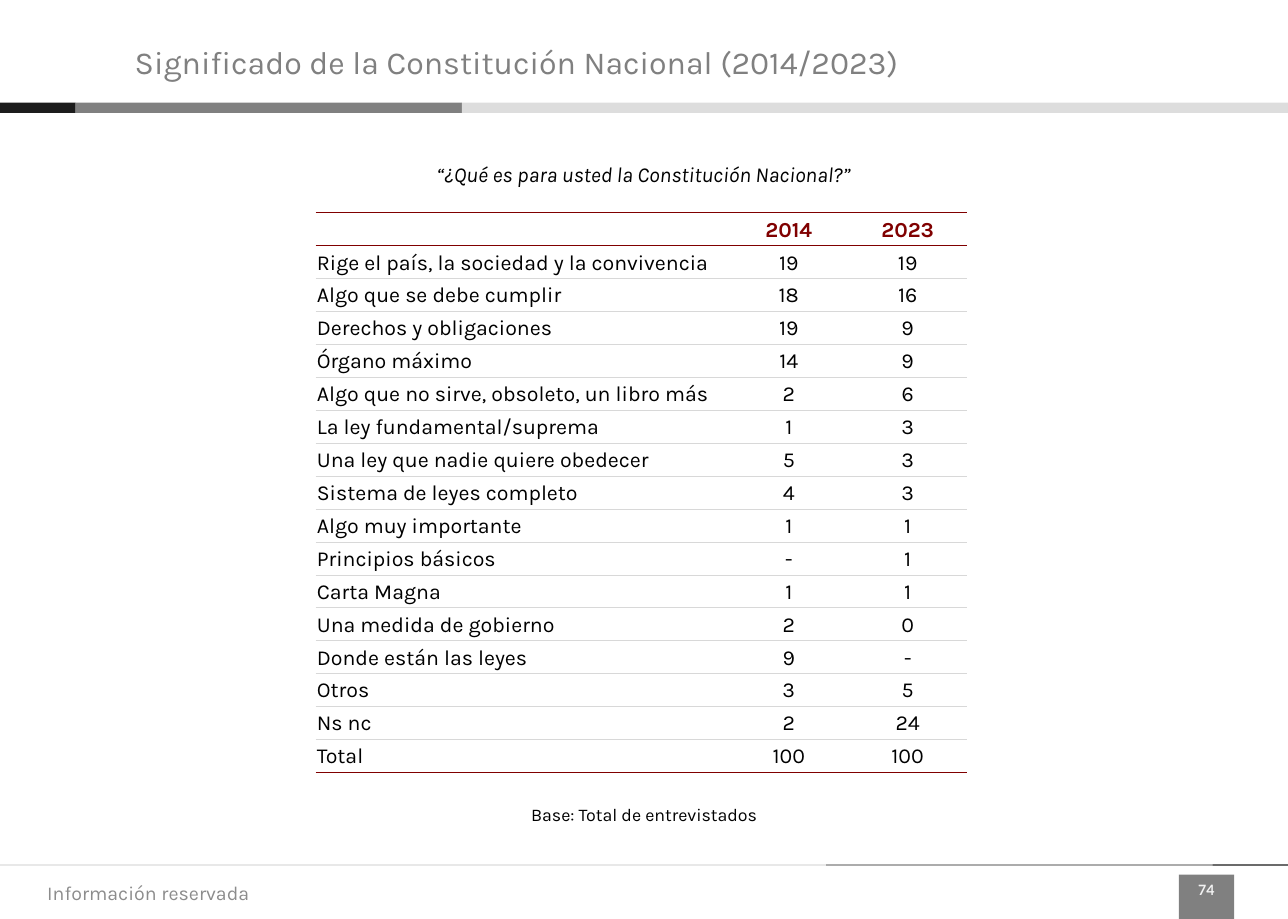
import pptx
import pptx.util
import pptx.dml.color
import pptx.enum.shapes
import pptx.enum.text
import pptx.oxml
import pptx.oxml.ns

Inches, Pt = pptx.util.Inches, pptx.util.Pt
RGBColor = pptx.dml.color.RGBColor
ALIGN, ANCHOR = pptx.enum.text.PP_ALIGN, pptx.enum.text.MSO_ANCHOR
RECT = pptx.enum.shapes.MSO_SHAPE.RECTANGLE

SLIDE_W, SLIDE_H = Inches(10.04), Pt(516)
W, H = SLIDE_W.inches, SLIDE_H.inches
BLACK = RGBColor(0x00, 0x00, 0x00)
DARK = RGBColor(0x1C, 0x1C, 0x1C)
GREY = RGBColor(0x80, 0x80, 0x80)
LIGHT = RGBColor(0xDD, 0xDD, 0xDD)
FOOTER = RGBColor(0x8C, 0x8C, 0x8C)
PAGE = RGBColor(0xF2, 0xF2, 0xF2)
MAROON = RGBColor(0x80, 0x00, 0x00)
RULE = RGBColor(0xD8, 0xD8, 0xD8)

# Band segments: width in inches, and colour
BAND = [(0.59, DARK), (3.01, GREY), (6.44, LIGHT)]

YEARS = ("", "2014", "2023")
ANSWERS = [
    ("Rige el país, la sociedad y la convivencia", "19", "19"),
    ("Algo que se debe cumplir", "18", "16"),
    ("Derechos y obligaciones", "19", "9"),
    ("Órgano máximo", "14", "9"),
    ("Algo que no sirve, obsoleto, un libro más", "2", "6"),
    ("La ley fundamental/suprema", "1", "3"),
    ("Una ley que nadie quiere obedecer", "5", "3"),
    ("Sistema de leyes completo", "4", "3"),
    ("Algo muy importante", "1", "1"),
    ("Principios básicos", "-", "1"),
    ("Carta Magna", "1", "1"),
    ("Una medida de gobierno", "2", "0"),
    ("Donde están las leyes", "9", "-"),
    ("Otros", "3", "5"),
    ("Ns nc", "2", "24"),
    ("Total", "100", "100"),
]


def add_run(p, text, size, color, font="Karla", bold=False, italic=False):
    r = p.add_run()
    r.text = text
    r.font.name, r.font.size = font, Pt(size)
    r.font.bold, r.font.italic = bold, italic
    r.font.color.rgb = color


def add_rect(slide, box, color):
    sp = slide.shapes.add_shape(RECT, *map(Inches, box))
    sp.shadow.inherit = False
    sp.fill.solid()
    sp.fill.fore_color.rgb = color
    sp.line.fill.background()
    return sp


def add_text(slide, box, text, size, color, align=ALIGN.LEFT,
             anchor=ANCHOR.TOP, italic=False, wrap=True):
    tf = slide.shapes.add_textbox(*map(Inches, box)).text_frame
    tf.word_wrap = wrap
    tf.vertical_anchor = anchor
    p = tf.paragraphs[0]
    p.alignment = align
    add_run(p, text, size, color, italic=italic)


def add_band(slide, box, segments):
    x, y, _, h = box
    for width, color in segments:
        add_rect(slide, (x, y, width, h), color)
        x += width


def add_header(slide, box, text):
    x, y, w, h = box
    add_band(slide, (x, y + h - 0.08, w, 0.08), BAND)
    title = slide.shapes.title
    title.left, title.top = Inches(x + 0.95), Inches(y + 0.11)
    title.width, title.height = Inches(7.88), Inches(0.74)
    tf = title.text_frame
    tf.auto_size = pptx.enum.text.MSO_AUTO_SIZE.NONE
    tf.vertical_anchor = ANCHOR.MIDDLE
    p = tf.paragraphs[0]
    p.alignment = ALIGN.LEFT
    add_run(p, text, 18, GREY)


def add_footer(slide, box, text, number):
    x, y, w, h = box
    add_band(slide, (x, y, w, 0.01), BAND[::-1])
    add_text(slide, (x + 0.27, y + 0.03, 2.34, 0.38), text, 11, FOOTER,
             anchor=ANCHOR.MIDDLE)
    sp = add_rect(slide, (x + w - 0.85, y + 0.08, 0.43, h - 0.08), GREY)
    tf = sp.text_frame
    tf.vertical_anchor = ANCHOR.TOP
    p = tf.paragraphs[0]
    p.alignment = ALIGN.CENTER
    add_run(p, number, 8, PAGE, font="Lato", bold=True)


def set_borders(cell, top, bottom):
    """Draw the top and bottom borders, given as (colour, points); clear the sides."""
    tc_pr = cell._tc.get_or_add_tcPr()
    ns = pptx.oxml.ns.nsdecls("a")
    for side, border in (("L", None), ("R", None), ("T", top), ("B", bottom)):
        if border:
            color, width = border
            xml = (f'<a:ln{side} {ns} w="{Pt(width)}"><a:solidFill>'
                   f'<a:srgbClr val="{color}"/></a:solidFill></a:ln{side}>')
        else:
            xml = f'<a:ln{side} {ns} w="0"><a:noFill/></a:ln{side}>'
        tc_pr.append(pptx.oxml.parse_xml(xml))


def add_answers_table(slide, box, rows, col_shares):
    x, y, w, h = box
    frame = slide.shapes.add_table(len(rows), len(col_shares), *map(Inches, box))
    table = frame.table
    table.horz_banding = table.first_row = False
    for col, share in zip(table.columns, col_shares):
        col.width = Inches(w * share)
    for row in table.rows:
        row.height = Inches(h / len(rows))

    # Strong rules frame the heading and close the table
    heading, thin, closing = (MAROON, 0.75), (RULE, 0.5), (MAROON, 1)
    rules = [heading, heading] + [thin] * (len(rows) - 2) + [closing]
    for i, row in enumerate(rows):
        for j, text in enumerate(row):
            cell = table.cell(i, j)
            set_borders(cell, rules[i], rules[i + 1])
            cell.fill.background()
            cell.vertical_anchor = ANCHOR.MIDDLE
            cell.margin_left = cell.margin_right = cell.margin_top = Inches(0.01)
            cell.margin_bottom = 0
            p = cell.text_frame.paragraphs[0]
            p.alignment = ALIGN.CENTER if j else ALIGN.LEFT
            if text:
                add_run(p, text, 12, BLACK if i else MAROON, bold=i == 0)
            else:
                end = pptx.oxml.parse_xml(
                    f'<a:endParaRPr {pptx.oxml.ns.nsdecls("a")} sz="1200"/>')
                p._p.append(end)


def add_survey(slide, box):
    x, y, w, h = box
    add_text(slide, (x, y, w, 0.3), "“¿Qué es para usted la Constitución Nacional?”",
             12, BLACK, ALIGN.CENTER, italic=True)
    add_answers_table(slide, (x + 0.77, y + 0.45, 5.08, 4.37),
                      [YEARS] + ANSWERS, (0.635, 0.1825, 0.1825))
    add_text(slide, (x + (w - 2.09) / 2, y + h - 0.28, 2.09, 0.28),
             "Base: Total de entrevistados", 10, BLACK, ALIGN.CENTER, wrap=False)


def main():
    prs = pptx.Presentation()
    prs.slide_width, prs.slide_height = SLIDE_W, SLIDE_H
    slide = prs.slides.add_slide(prs.slide_layouts[5])
    add_header(slide, (0, 0, W, 0.88),
               "Significado de la Constitución Nacional (2014/2023)")
    add_survey(slide, (1.69, 1.21, 6.66, 5.29))
    add_footer(slide, (0, 6.74, W, H - 6.74), "Información reservada", "74")
    prs.save("out.pptx")


if __name__ == "__main__":
    main()
